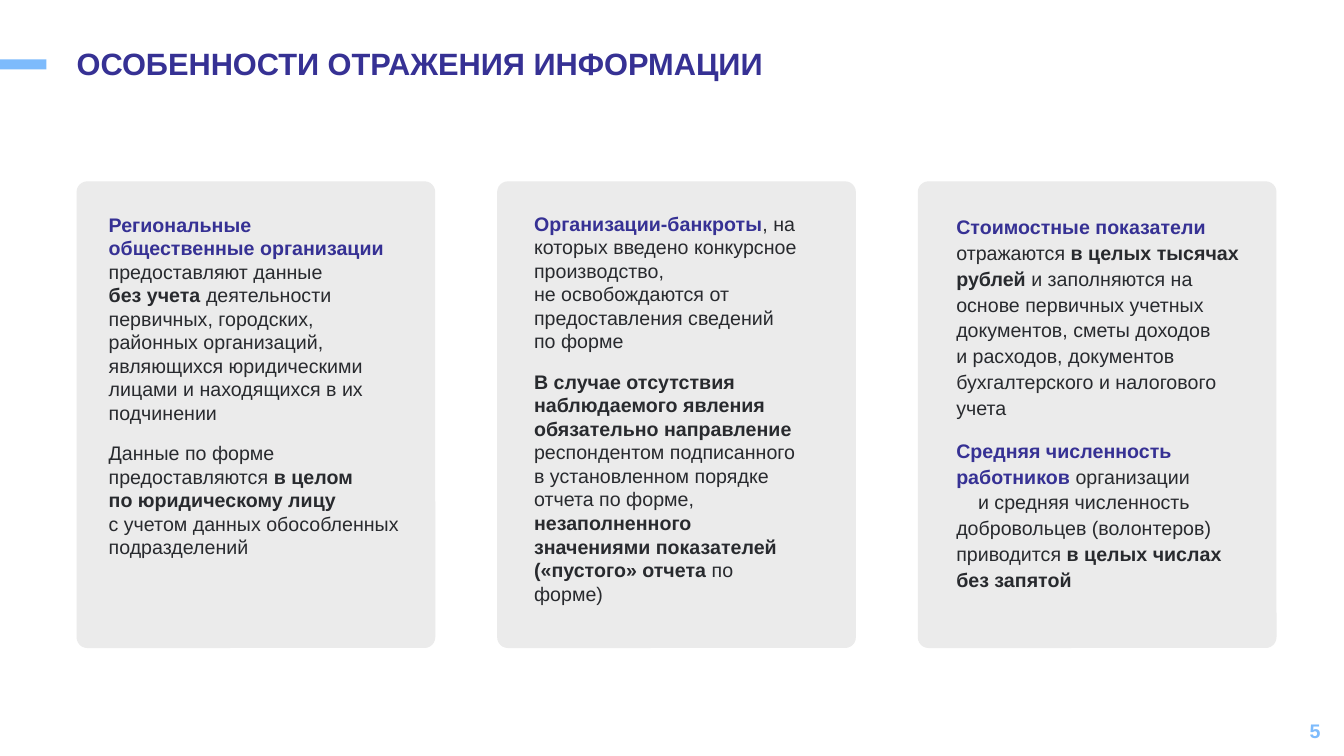
from typing import NamedTuple

from lxml.etree import SubElement
from pptx import Presentation
from pptx.dml.color import RGBColor
from pptx.enum.shapes import MSO_SHAPE
from pptx.enum.text import MSO_ANCHOR, MSO_AUTO_SIZE, PP_ALIGN
from pptx.oxml.ns import qn
from pptx.util import Cm, Pt

INDIGO = "363194"
INK = "282A2E"
SKY = "7DBBFC"
CARD_GREY = "EBEBEB"
FONT = "Arial"
CARD_LEFT, CARD_TOP, CARD_PITCH = 1.93, 4.57, 10.6
CARD_WIDTH, CARD_HEIGHT = 9.04, 11.76


class Box(NamedTuple):
    """Position and size in centimetres."""
    left: float
    top: float
    width: float
    height: float


class Span(NamedTuple):
    """A run of text with its weight and colour."""
    text: str
    bold: bool = False
    color: str = INK


class Card(NamedTuple):
    """A column of text, set over its own grey panel."""
    box: Box
    line_spacing: float
    paragraphs: list[list[Span]]


def key(text: str) -> Span:
    """Return a highlighted opening phrase."""
    return Span(text, True, INDIGO)


CARDS = [
    Card(Box(2.49, 5.23, 7.87, 8.86), 1.0, [
        [key("Региональные общественные организации "),
         Span("предоставляют данные \v"),
         Span("без учета ", True),
         Span("деятельности первичных, городских, районных организаций, "
              "являющихся юридическими лицами и находящихся в их подчинении")],
        [Span("Данные по форме предоставляются "),
         Span("в целом \vпо юридическому лицу \v", True),
         Span("с учетом данных обособленных подразделений")],
    ]),
    Card(Box(13.21, 5.21, 7.34, 10.26), 1.0, [
        [key("Организации-банкроты"),
         Span(", на которых введено конкурсное производство, \v"
              "не освобождаются от предоставления сведений\vпо форме")],
        [Span("В случае отсутствия наблюдаемого явления обязательно направление ", True),
         Span("респондентом подписанного в установленном порядке отчета по форме, "),
         Span("незаполненного значениями показателей («пустого» отчета ", True),
         Span("по форме)")],
    ]),
    Card(Box(23.85, 5.23, 7.65, 10.21), 1.1, [
        [key("Стоимостные показатели "),
         Span("отражаются "),
         Span("в целых тысячах рублей ", True),
         Span("и заполняются на основе первичных учетных документов, сметы доходов\v"
              "и расходов, документов бухгалтерского и налогового учета")],
        [key("Средняя численность работников "),
         Span("организации\v\tи средняя численность добровольцев (волонтеров) приводится "),
         Span("в целых числах без запятой", True)],
    ]),
]


def rgb(color: str) -> RGBColor:
    """Turn a hex string into a colour."""
    return RGBColor.from_string(color)


def add_panel(slide, kind: MSO_SHAPE, box: Box, color: str):
    """Draw a plain filled shape."""
    shape = slide.shapes.add_shape(kind, *map(Cm, box))
    shape.shadow.inherit = False
    shape.fill.solid()
    shape.fill.fore_color.rgb = rgb(color)
    shape.line.fill.background()
    return shape


def add_span(paragraph, span: Span, size: float = 14) -> None:
    """Append one span, turning vertical tabs into line breaks."""
    for index, line in enumerate(span.text.split("\v")):
        if index:
            paragraph.add_line_break()
        if line:
            run = paragraph.add_run()
            run.text = line
            run.font.name = FONT
            run.font.size = Pt(size)
            run.font.bold = span.bold
            run.font.color.rgb = rgb(span.color)


def add_text_box(slide, box: Box):
    """Add a wrapping text box and return its frame."""
    frame = slide.shapes.add_textbox(*map(Cm, box)).text_frame
    frame.word_wrap = True
    return frame


def add_tab_stop(paragraph, position: float) -> None:
    """Set a left tab stop for an indented line."""
    tabs = SubElement(paragraph._p.get_or_add_pPr(), qn("a:tabLst"))
    SubElement(tabs, qn("a:tab"), pos=str(Cm(position)), algn="l")


def add_card(slide, index: int, card: Card) -> None:
    """Draw a rounded panel and its paragraphs."""
    box = Box(CARD_LEFT + index * CARD_PITCH, CARD_TOP, CARD_WIDTH, CARD_HEIGHT)
    panel = add_panel(slide, MSO_SHAPE.ROUNDED_RECTANGLE, box, CARD_GREY)
    panel.adjustments[0] = 0.03
    frame = add_text_box(slide, card.box)
    for number, spans in enumerate(card.paragraphs):
        paragraph = frame.add_paragraph() if number else frame.paragraphs[0]
        paragraph.line_spacing = card.line_spacing
        if number:
            paragraph.space_before = Pt(12)
        if any("\t" in span.text for span in spans):
            add_tab_stop(paragraph, 0.55)
        for span in spans:
            add_span(paragraph, span)


def set_title(slide, text: str) -> None:
    """Place and format the title placeholder."""
    title = slide.shapes.title
    title.left, title.top, title.width, title.height = map(Cm, Box(1.68, 1.09, 22.96, 1.12))
    frame = title.text_frame
    frame.auto_size = MSO_AUTO_SIZE.NONE
    frame.vertical_anchor = MSO_ANCHOR.MIDDLE
    paragraph = frame.paragraphs[0]
    paragraph.alignment = PP_ALIGN.LEFT
    paragraph.line_spacing = 0.9
    add_span(paragraph, key(text), 22)


def add_page_number(slide, number: int) -> None:
    """Write the page number in the lower right corner."""
    frame = add_text_box(slide, Box(25.91, 17.91, 7.62, 1.02))
    frame.vertical_anchor = MSO_ANCHOR.MIDDLE
    frame.paragraphs[0].alignment = PP_ALIGN.RIGHT
    add_span(frame.paragraphs[0], Span(str(number), True, SKY))


def main() -> None:
    """Build and save the slide."""
    presentation = Presentation()
    presentation.slide_width, presentation.slide_height = Cm(33.87), Cm(19.05)
    slide = presentation.slides.add_slide(presentation.slide_layouts[5])
    set_title(slide, "ОСОБЕННОСТИ ОТРАЖЕНИЯ ИНФОРМАЦИИ")
    add_panel(slide, MSO_SHAPE.RECTANGLE, Box(0, 1.5, 1.17, 0.25), SKY)
    for index, card in enumerate(CARDS):
        add_card(slide, index, card)
    add_page_number(slide, 5)
    presentation.save("out.pptx")


if __name__ == "__main__":
    main()
